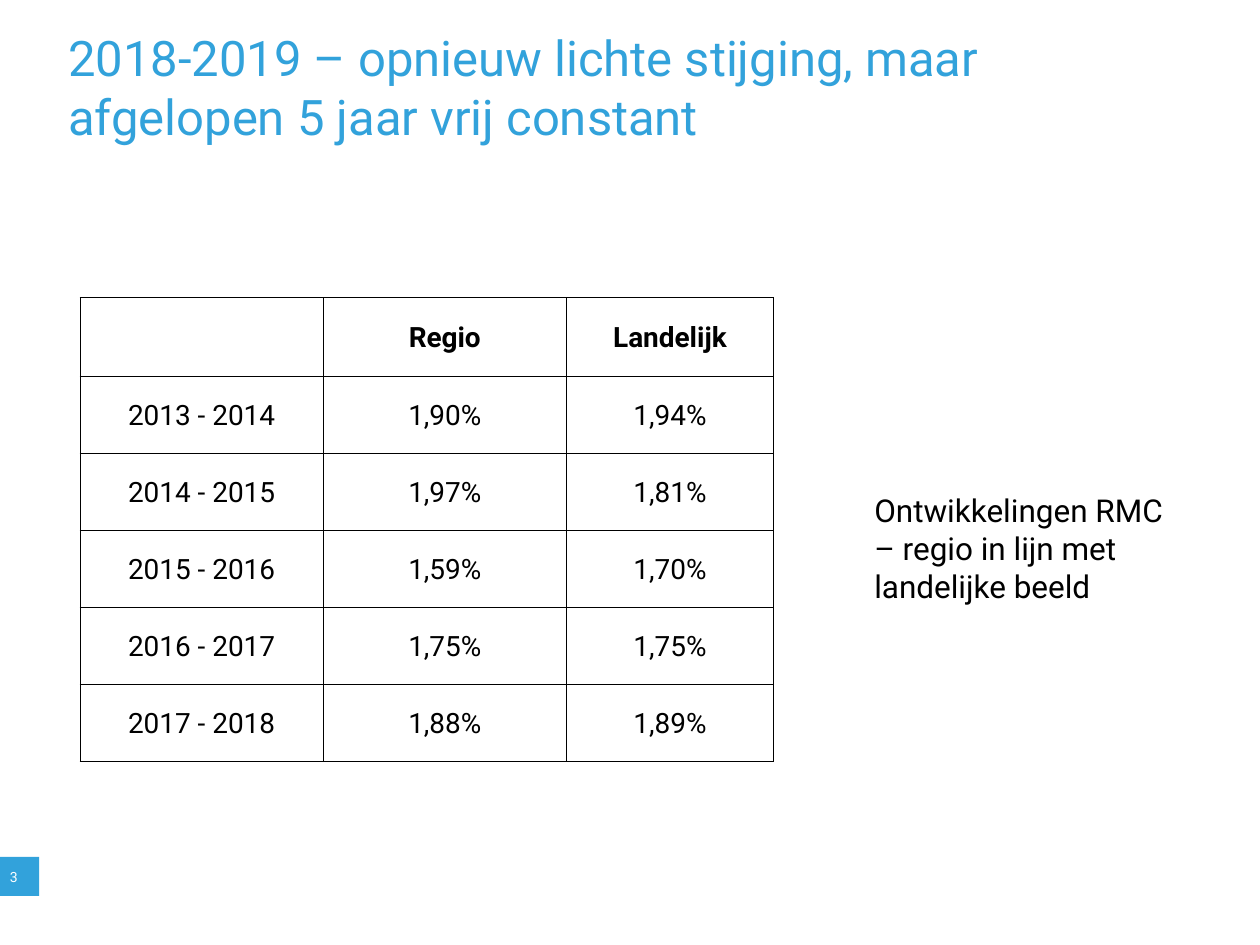
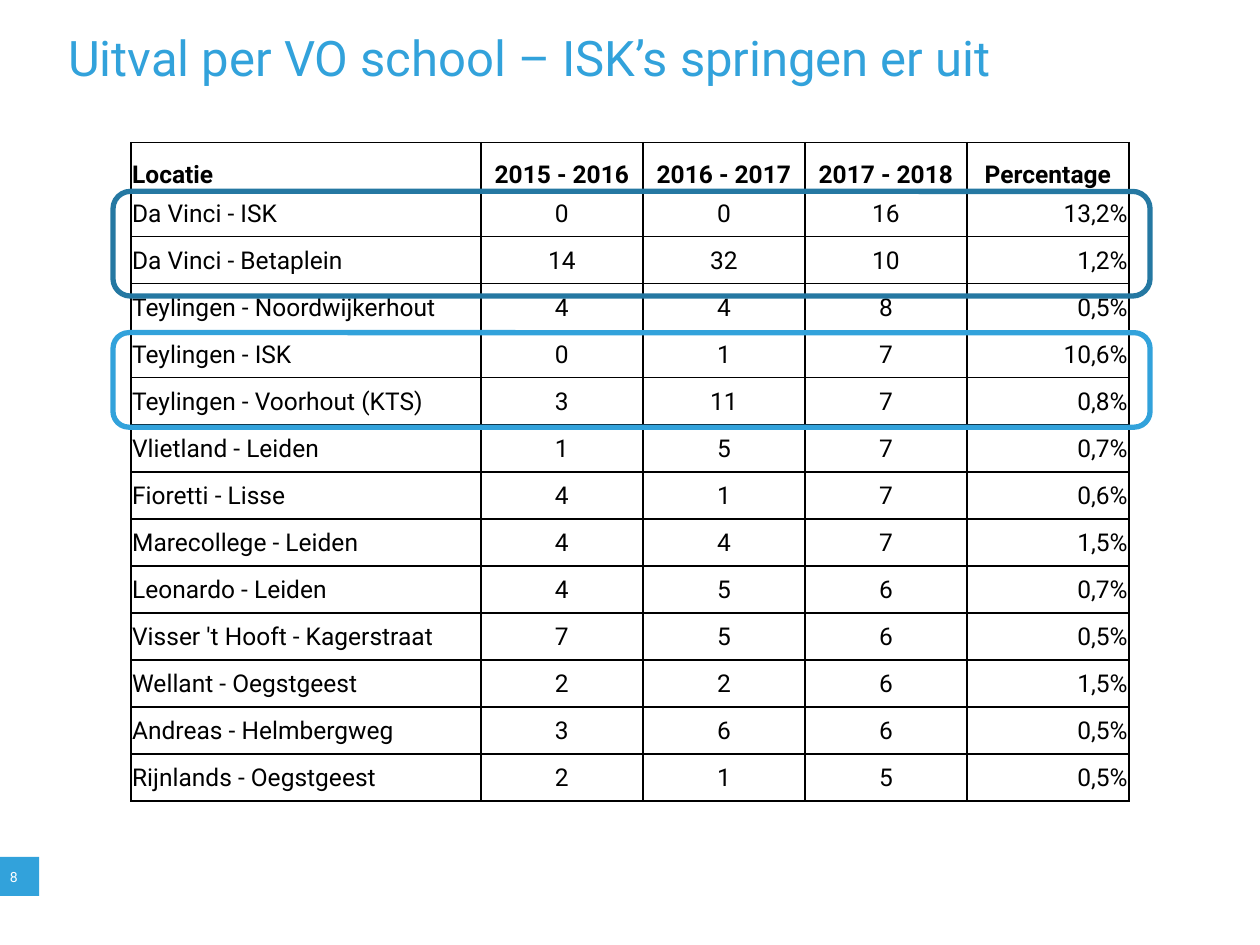
"""Build two slides on early school leaving: regional trend and figures per school."""
from lxml import etree
from pptx import Presentation
from pptx.dml.color import RGBColor
from pptx.enum import shapes, text
from pptx.oxml.ns import qn
from pptx.util import Pt

BLUE = RGBColor(0x32, 0xA2, 0xDB)
DARK_BLUE = RGBColor(0x25, 0x78, 0xA2)
BLACK = RGBColor(0, 0, 0)
WHITE = RGBColor(255, 255, 255)
FONT = "Roboto"
LEFT, CENTER, RIGHT = text.PP_ALIGN.LEFT, text.PP_ALIGN.CENTER, text.PP_ALIGN.RIGHT
MIDDLE, BOTTOM = text.MSO_ANCHOR.MIDDLE, text.MSO_ANCHOR.BOTTOM

TREND_TITLE = "2018-2019 – opnieuw lichte stijging, maar afgelopen 5 jaar vrij constant"
TREND_NOTE = "Ontwikkelingen RMC – regio in lijn met landelijke beeld"
TREND_ROWS = [
    ("", "Regio", "Landelijk"),
    ("2013 - 2014", "1,90%", "1,94%"),
    ("2014 - 2015", "1,97%", "1,81%"),
    ("2015 - 2016", "1,59%", "1,70%"),
    ("2016 - 2017", "1,75%", "1,75%"),
    ("2017 - 2018", "1,88%", "1,89%"),
]

SCHOOL_TITLE = "Uitval per VO school – ISK’s springen er uit"
SCHOOL_ROWS = [
    ("Locatie", "2015 - 2016", "2016 - 2017", "2017 - 2018", "Percentage"),
    ("Da Vinci - ISK", 0, 0, 16, "13,2%"),
    ("Da Vinci - Betaplein", 14, 32, 10, "1,2%"),
    ("Teylingen - Noordwijkerhout", 4, 4, 8, "0,5%"),
    ("Teylingen - ISK", 0, 1, 7, "10,6%"),
    ("Teylingen - Voorhout (KTS)", 3, 11, 7, "0,8%"),
    ("Vlietland - Leiden", 1, 5, 7, "0,7%"),
    ("Fioretti - Lisse", 4, 1, 7, "0,6%"),
    ("Marecollege - Leiden", 4, 4, 7, "1,5%"),
    ("Leonardo - Leiden", 4, 5, 6, "0,7%"),
    ("Visser 't Hooft - Kagerstraat", 7, 5, 6, "0,5%"),
    ("Wellant - Oegstgeest", 2, 2, 6, "1,5%"),
    ("Andreas - Helmbergweg", 3, 6, 6, "0,5%"),
    ("Rijnlands - Oegstgeest", 2, 1, 5, "0,5%"),
]
SCHOOL_HIGHLIGHTS = [(109.4, 59.8, DARK_BLUE), (190.1, 54, BLUE)]


def style_paragraph(paragraph, size, color, bold=False):
    font = paragraph.font
    font.name, font.size, font.bold = FONT, Pt(size), bold
    font.color.rgb = color


def add_text(slide, box, content, size, color, inset=None):
    frame = slide.shapes.add_textbox(*map(Pt, box)).text_frame
    frame.word_wrap = True
    if inset is not None:
        frame.margin_left = frame.margin_right = Pt(inset)
        frame.margin_top = frame.margin_bottom = Pt(inset)
    frame.text = content
    style_paragraph(frame.paragraphs[0], size, color)


def add_slide(presentation, title, title_width, number):
    slide = presentation.slides.add_slide(presentation.slide_layouts[6])
    marker = slide.shapes.add_shape(
        shapes.MSO_SHAPE.RECTANGLE, Pt(0), Pt(489.6), Pt(22.4), Pt(22.4))
    marker.shadow.inherit = False
    marker.fill.solid()
    marker.fill.fore_color.rgb = BLUE
    marker.line.fill.background()
    add_text(slide, (-1.4, 492.5, 28, 17), str(number), 8, WHITE)
    add_text(slide, (36, 13, title_width, 91), title, 28, BLUE, inset=3)
    return slide


def add_borders(cell, width):
    properties = cell._tc.get_or_add_tcPr()
    for index, side in enumerate(("lnL", "lnR", "lnT", "lnB")):
        line = etree.Element(qn(f"a:{side}"), w=str(Pt(width)))
        fill = etree.SubElement(line, qn("a:solidFill"))
        etree.SubElement(fill, qn("a:srgbClr"), val=str(BLACK))
        properties.insert(index, line)


def add_grid(slide, left, top, rows, widths, heights, size, alignments, header_anchor, border):
    frame = slide.shapes.add_table(
        len(rows), len(widths), Pt(left), Pt(top), Pt(sum(widths)), Pt(sum(heights)))
    table = frame.table
    table.first_row = table.horz_banding = False
    for column, width in zip(table.columns, widths):
        column.width = Pt(width)
    for row, height in zip(table.rows, heights):
        row.height = Pt(height)
    for row_index, values in enumerate(rows):
        header = row_index == 0
        for column_index, value in enumerate(values):
            cell = table.cell(row_index, column_index)
            cell.fill.background()
            cell.margin_left = cell.margin_right = cell.margin_top = Pt(0.7)
            cell.margin_bottom = Pt(0)
            cell.vertical_anchor = header_anchor if header else MIDDLE
            cell.text = str(value)
            paragraph = cell.text_frame.paragraphs[0]
            is_header_number = header and column_index > 0
            paragraph.alignment = CENTER if is_header_number else alignments[column_index]
            style_paragraph(paragraph, size, BLACK, bold=header)
            add_borders(cell, border)


def build_trend(presentation):
    slide = add_slide(presentation, TREND_TITLE, 577.5, 3)
    add_grid(slide, 45.7, 170.2, TREND_ROWS, [139, 139, 118.4], [45] + [44] * 5,
             16, [CENTER] * 3, MIDDLE, 0.5)
    add_text(slide, (492.5, 277.2, 190.8, 72.7), TREND_NOTE, 18, BLACK)


def build_schools(presentation):
    slide = add_slide(presentation, SCHOOL_TITLE, 555, 8)
    add_grid(slide, 74.8, 81.5, SCHOOL_ROWS, [200] + [92.6] * 4, [26.9] * len(SCHOOL_ROWS),
             14, [LEFT] + [CENTER] * 3 + [RIGHT], BOTTOM, 1)
    for top, height, color in SCHOOL_HIGHLIGHTS:
        highlight = slide.shapes.add_shape(
            shapes.MSO_SHAPE.ROUNDED_RECTANGLE, Pt(64.6), Pt(top), Pt(592.6), Pt(height))
        highlight.shadow.inherit = False
        highlight.fill.background()
        highlight.line.color.rgb = color
        highlight.line.width = Pt(3)


def main():
    presentation = Presentation()
    presentation.slide_width, presentation.slide_height = Pt(720), Pt(540)
    build_trend(presentation)
    build_schools(presentation)
    presentation.save("out.pptx")


if __name__ == "__main__":
    main()
